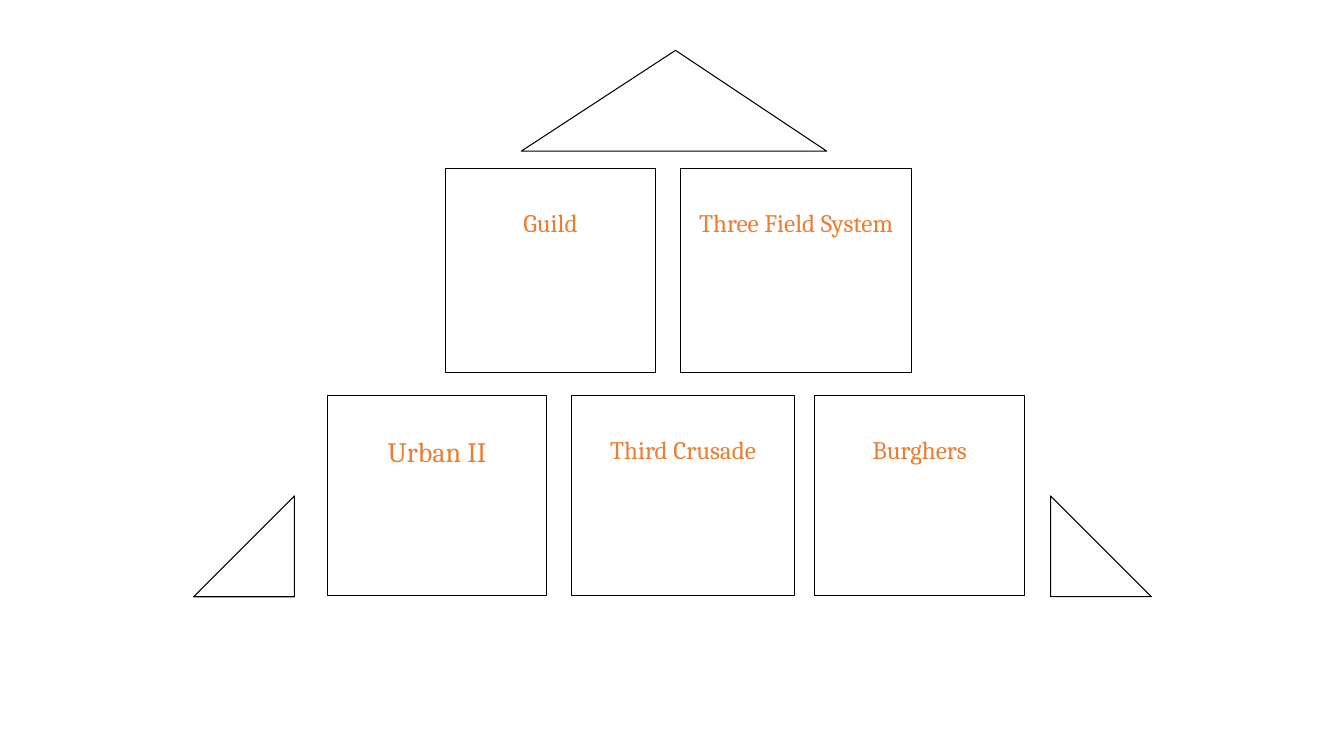
from dataclasses import dataclass

from pptx import Presentation
from pptx.dml.color import RGBColor
from pptx.enum.shapes import MSO_SHAPE as Preset
from pptx.enum.text import MSO_ANCHOR as Anchor, PP_ALIGN as Align
from pptx.shapes.autoshape import Shape
from pptx.slide import Slide
from pptx.util import Inches, Pt


@dataclass(frozen=True)
class Theme:
    """Colours, font and sizes of the pyramid."""
    paper: RGBColor = RGBColor(0xFF, 0xFF, 0xFF)
    outline: RGBColor = RGBColor(0, 0, 0)
    term: RGBColor = RGBColor(0xED, 0x7D, 0x31)
    font: str = "Cambria"
    term_size: int = 18
    large_term_size: int = 20
    outline_width: float = 0.75
    term_drop: float = 0.39


@dataclass(frozen=True)
class Row:
    """A row of equally tall blocks."""
    top: float
    height: float


@dataclass(frozen=True)
class Block:
    """A pyramid block headed by a term."""
    term: str
    row: Row
    left: float
    width: float
    size: int


@dataclass(frozen=True)
class Corner:
    """A triangle that finishes the pyramid."""
    preset: Preset
    left: float
    top: float
    width: float
    rotation: float = 0
    apex: float | None = None


THEME = Theme()
CORNER_HEIGHT = 1
UPPER = Row(1.67, 2.03)
LOWER = Row(3.92, 1.99)
BLOCKS = (
    Block("Three Field System", UPPER, 6.75, 2.29, THEME.term_size),
    Block("Guild", UPPER, 4.42, 2.08, THEME.term_size),
    Block("Burghers", LOWER, 8.08, 2.08, THEME.term_size),
    Block("Third Crusade", LOWER, 5.67, 2.21, THEME.term_size),
    Block("Urban II", LOWER, 3.25, 2.17, THEME.large_term_size),
)
CORNERS = (
    Corner(Preset.ISOSCELES_TRIANGLE, 5.17, 0.5, 3.03, apex=0.505),
    Corner(Preset.RIGHT_TRIANGLE, 1.92, 4.92, 1, rotation=270),
    Corner(Preset.RIGHT_TRIANGLE, 10.42, 4.92, 1),
)


def draw_outlined(slide: Slide, preset: Preset, left: float, top: float,
                  width: float, height: float) -> Shape:
    """Add a white shape with a thin black outline."""
    outlined = slide.shapes.add_shape(
        preset, Inches(left), Inches(top), Inches(width), Inches(height))
    outlined.shadow.inherit = False
    outlined.fill.solid()
    outlined.fill.fore_color.rgb = THEME.paper
    outlined.line.color.rgb = THEME.outline
    outlined.line.width = Pt(THEME.outline_width)
    return outlined


def draw_block(slide: Slide, block: Block) -> None:
    """Draw a block with its term near the top."""
    body = draw_outlined(slide, Preset.RECTANGLE, block.left, block.row.top,
                         block.width, block.row.height)
    frame = body.text_frame
    frame.word_wrap = True
    frame.vertical_anchor = Anchor.TOP
    frame.margin_top = Inches(THEME.term_drop)
    frame.text = block.term
    heading = frame.paragraphs[0]
    heading.alignment = Align.CENTER
    font = heading.runs[0].font
    font.name = THEME.font
    font.size = Pt(block.size)
    font.color.rgb = THEME.term


def draw_corner(slide: Slide, corner: Corner) -> None:
    """Draw a triangle at a corner of the pyramid."""
    triangle = draw_outlined(slide, corner.preset, corner.left, corner.top,
                             corner.width, CORNER_HEIGHT)
    triangle.rotation = corner.rotation
    if corner.apex is not None:
        triangle.adjustments[0] = corner.apex


def main() -> None:
    """Build the pyramid slide and save it."""
    deck = Presentation()
    deck.slide_width = Inches(13.33)
    deck.slide_height = Inches(7.5)
    slide = deck.slides.add_slide(deck.slide_layouts[6])
    for block in BLOCKS:
        draw_block(slide, block)
    for corner in CORNERS:
        draw_corner(slide, corner)
    deck.save("out.pptx")


if __name__ == "__main__":
    main()
